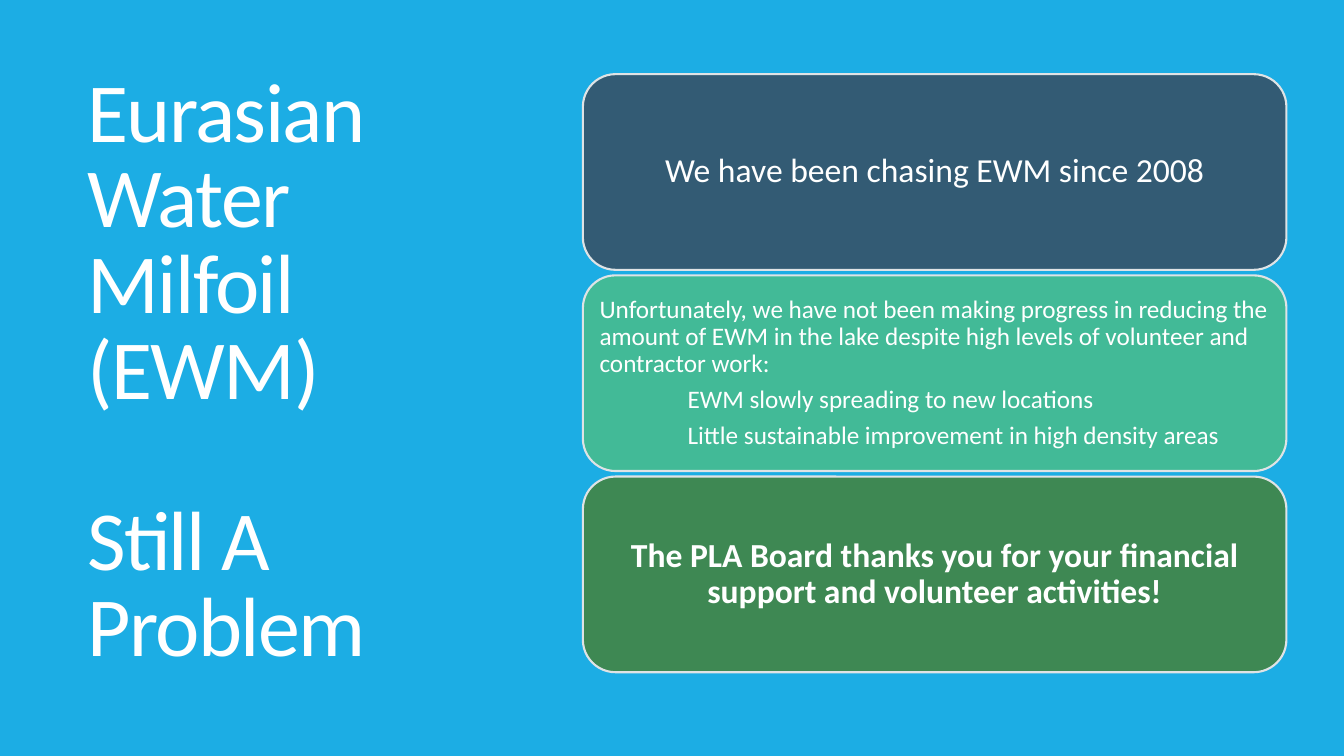
from pptx import Presentation
from pptx.dml.color import RGBColor
from pptx.enum.shapes import MSO_SHAPE as Preset
from pptx.enum.text import MSO_ANCHOR as Anchor, PP_ALIGN as Align
from pptx.util import Cm, Pt

COLORS = {
    "background": "1CADE4",
    "text": "FFFFFF",
    "outline": "DFE3E5",
    "navy": "335B74",
    "teal": "42BA97",
    "green": "3E8853",
}
FONT = "Calibri"
SLIDE_WIDTH, SLIDE_HEIGHT = Cm(33.87), Cm(19.05)
CARD_LEFT, CARD_TOP = 14.69, 1.87
CARD_WIDTH, CARD_HEIGHT, CARD_PITCH = 17.73, 4.93, 5.07
SUBPOINT_INDENT = Cm(2.22)


def color(name):
    return RGBColor.from_string(COLORS[name])


def add_filled_shape(slide, preset, left, top, width, height, fill):
    shape = slide.shapes.add_shape(preset, left, top, width, height)
    shape.shadow.inherit = False
    shape.fill.solid()
    shape.fill.fore_color.rgb = color(fill)
    shape.line.fill.background()
    return shape


def write_text(text_frame, lines, size, spacing, gap, align=Align.LEFT, bold=False):
    text_frame.word_wrap = True
    text_frame.vertical_anchor = Anchor.MIDDLE
    text_frame.text = "\n".join(lines)
    for index, paragraph in enumerate(text_frame.paragraphs):
        paragraph.alignment = align
        paragraph.line_spacing = spacing
        paragraph.space_before = Pt(gap if index else 0)
        for run in paragraph.runs:
            run.font.name = FONT
            run.font.size = Pt(size)
            run.font.bold = bold
            run.font.color.rgb = color("text")


def add_title(slide, lines):
    box = slide.shapes.add_textbox(Cm(1.96), Cm(1.78), Cm(11.1), Cm(15.27))
    box.text_frame.margin_right = Cm(0.6)
    write_text(box.text_frame, lines, size=60, spacing=0.85, gap=61.5)
    for paragraph in box.text_frame.paragraphs:
        for run in paragraph.runs:
            run.font._element.set("spc", "-120")


def add_card(slide, row, fill, lines, size, inset, align=Align.CENTER, bold=False):
    top = Cm(CARD_TOP + row * CARD_PITCH)
    card = add_filled_shape(slide, Preset.ROUNDED_RECTANGLE, Cm(CARD_LEFT), top,
                            Cm(CARD_WIDTH), Cm(CARD_HEIGHT), fill)
    card.line.color.rgb = color("outline")
    card.line.width = Pt(1.5)
    text_frame = card.text_frame
    text_frame.margin_left = text_frame.margin_right = Cm(inset)
    text_frame.margin_top = text_frame.margin_bottom = Cm(inset)
    write_text(text_frame, lines, size, spacing=0.9, gap=size * 0.35,
               align=align, bold=bold)
    for paragraph in text_frame.paragraphs[1:]:
        properties = paragraph._p.get_or_add_pPr()
        properties.set("marL", str(SUBPOINT_INDENT))
        properties.set("indent", "0")


def main():
    presentation = Presentation()
    presentation.slide_width = SLIDE_WIDTH
    presentation.slide_height = SLIDE_HEIGHT
    slide = presentation.slides.add_slide(presentation.slide_layouts[6])

    add_filled_shape(slide, Preset.RECTANGLE, 0, 0, SLIDE_WIDTH, SLIDE_HEIGHT,
                     "background")
    add_title(slide, ["Eurasian Water Milfoil (EWM)", "Still A Problem"])
    add_card(slide, 0, "navy", ["We have been chasing EWM since 2008"],
             size=24, inset=0.25)
    add_card(slide, 1, "teal", [
        "Unfortunately, we have not been making progress in reducing the amount "
        "of EWM in the lake despite high levels of volunteer and contractor work:",
        "EWM slowly spreading to new locations",
        "Little sustainable improvement in high density areas",
    ], size=18, inset=0.18, align=Align.LEFT)
    add_card(slide, 2, "green", [
        "The PLA Board thanks you for your financial support and volunteer activities!",
    ], size=24, inset=0.25, bold=True)

    presentation.save("out.pptx")


if __name__ == "__main__":
    main()
